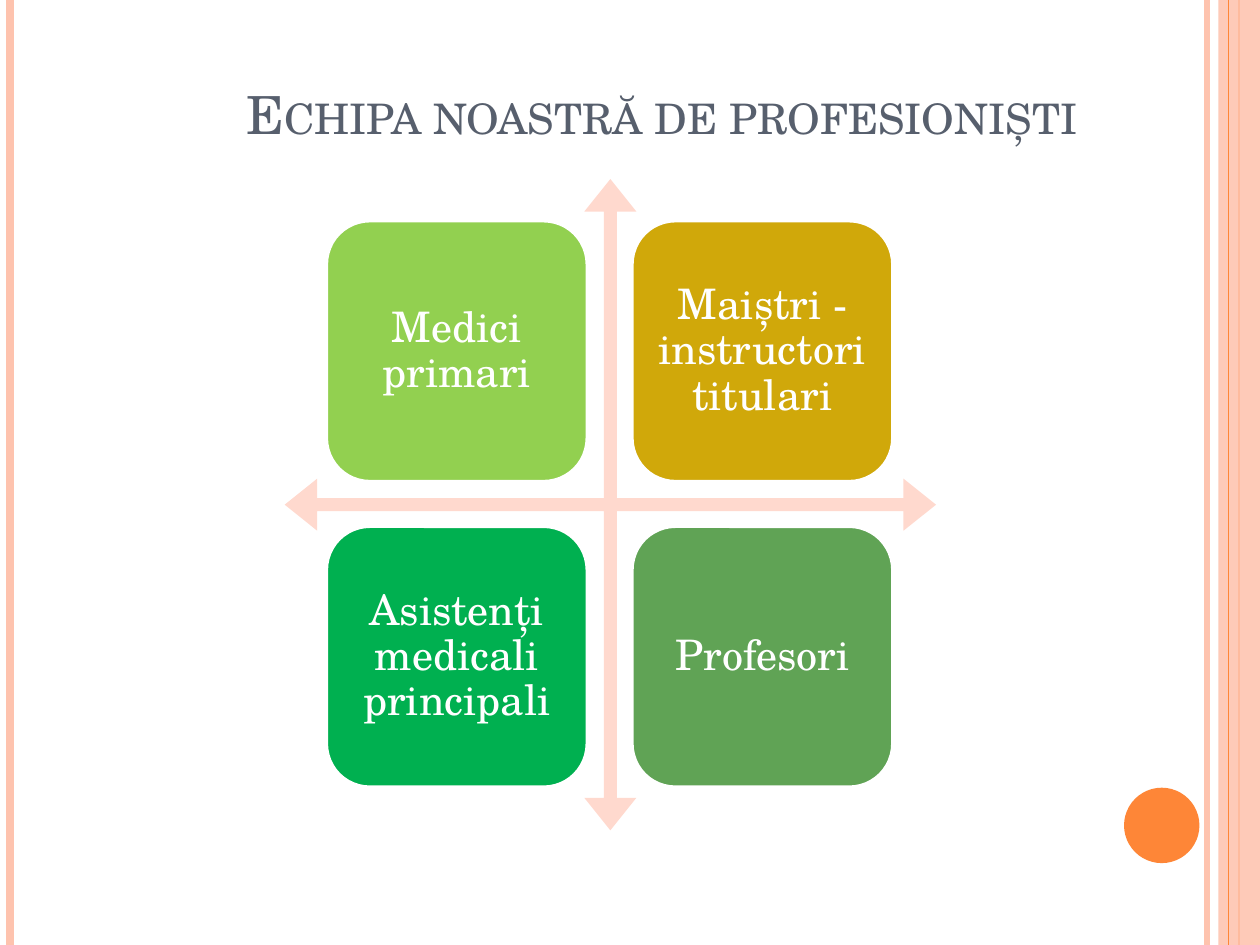
from lxml.etree import SubElement
from pptx import Presentation
from pptx.dml.color import RGBColor
from pptx.enum.shapes import MSO_CONNECTOR, MSO_SHAPE
from pptx.enum.text import MSO_ANCHOR, PP_ALIGN
from pptx.oxml.ns import qn
from pptx.util import Cm, Pt

FONT = "TeX Gyre Schola"
PEACH, ORANGE, WHITE = "FEC3AE", "FE8637", "FFFFFF"


def paint(color_format, color, opacity=100):
    color_format.rgb = RGBColor.from_string(color)
    if opacity < 100:
        choice = color_format._xFill.find(qn("a:srgbClr"))
        SubElement(choice, qn("a:alpha"), val=str(opacity * 1000))


def write(shape, text, size, color, anchor=MSO_ANCHOR.MIDDLE, line_spacing=1.0, small_caps=False):
    """Put one centred paragraph into the shape."""
    frame = shape.text_frame
    frame.word_wrap = True
    frame.vertical_anchor = anchor
    paragraph = frame.paragraphs[0]
    paragraph.alignment = PP_ALIGN.CENTER
    paragraph.line_spacing = line_spacing
    run = paragraph.add_run()
    run.text = text
    run.font.name = FONT
    run.font.size = Pt(size)
    paint(run.font.color, color)
    if small_caps:
        run.font._element.set("cap", "small")


presentation = Presentation()
presentation.slide_width, presentation.slide_height = Cm(25.4), Cm(19.05)
slide = presentation.slides.add_slide(presentation.slide_layouts[6])
shapes = slide.shapes

# Vertical stripes; the band covers every stripe except the last
stripes = [(24.33, PEACH, 3), (0.21, PEACH, 4.5), (24.98, ORANGE, 1.5), (24.77, ORANGE, 0.75)]
for x, color, width in stripes:
    stripe = shapes.add_connector(MSO_CONNECTOR.STRAIGHT, Cm(x), 0, Cm(x), presentation.slide_height)
    stripe.line.width = Pt(width)
    stripe.line.fill.solid()
    paint(stripe.line.color, color)
    SubElement(stripe._element.spPr, qn("a:effectLst"))
last_stripe = stripe

band = shapes.add_shape(MSO_SHAPE.RECTANGLE, Cm(24.56), 0, Cm(0.84), presentation.slide_height)
band.shadow.inherit = False
band.line.fill.background()
band.fill.solid()
band.fill.fore_color.rgb = RGBColor.from_string(PEACH)
band_color = band._element.spPr.find(qn("a:solidFill")).find(qn("a:srgbClr"))
SubElement(band_color, qn("a:alpha"), val="87000")
band._element.addnext(last_stripe._element)

# Corner disc and four-way arrow
plain_shapes = [
    (MSO_SHAPE.OVAL, 22.66, 15.88, 1.52, ORANGE, []),
    (MSO_SHAPE.QUAD_ARROW, 5.74, 3.61, 13.13, "FFD9CE", [0.02, 0.04, 0.05]),
]
for kind, left, top, size, color, adjustments in plain_shapes:
    shape = shapes.add_shape(kind, Cm(left), Cm(top), Cm(size), Cm(size))
    shape.shadow.inherit = False
    shape.line.fill.background()
    shape.fill.solid()
    paint(shape.fill.fore_color, color)
    for index, value in enumerate(adjustments):
        shape.adjustments[index] = value

title = shapes.add_textbox(Cm(2.97), Cm(0.84), Cm(20.75), Cm(2.21))
write(title, "Echipa noastră de profesioniști", 30, "575F6D", anchor=MSO_ANCHOR.BOTTOM, small_caps=True)

# Team cards in a two by two grid
card_size, card_step = 5.26, 6.16
cards = [
    ("Medici primari", "92D050"),
    ("Maiștri - instructori titulari", "D0A80A"),
    ("Asistenți medicali principali", "00B050"),
    ("Profesori", "60A355"),
]
for index, (text, color) in enumerate(cards):
    row, column = divmod(index, 2)
    card = shapes.add_shape(
        MSO_SHAPE.ROUNDED_RECTANGLE,
        Cm(6.58 + column * card_step), Cm(4.45 + row * card_step), Cm(card_size), Cm(card_size),
    )
    card.shadow.inherit = False
    card.fill.solid()
    paint(card.fill.fore_color, color)
    card.line.width = Pt(2)
    paint(card.line.color, WHITE)
    frame = card.text_frame
    frame.margin_left = frame.margin_right = frame.margin_top = frame.margin_bottom = Cm(0.25)
    write(card, text, 24, WHITE, line_spacing=0.9)

presentation.save("out.pptx")
